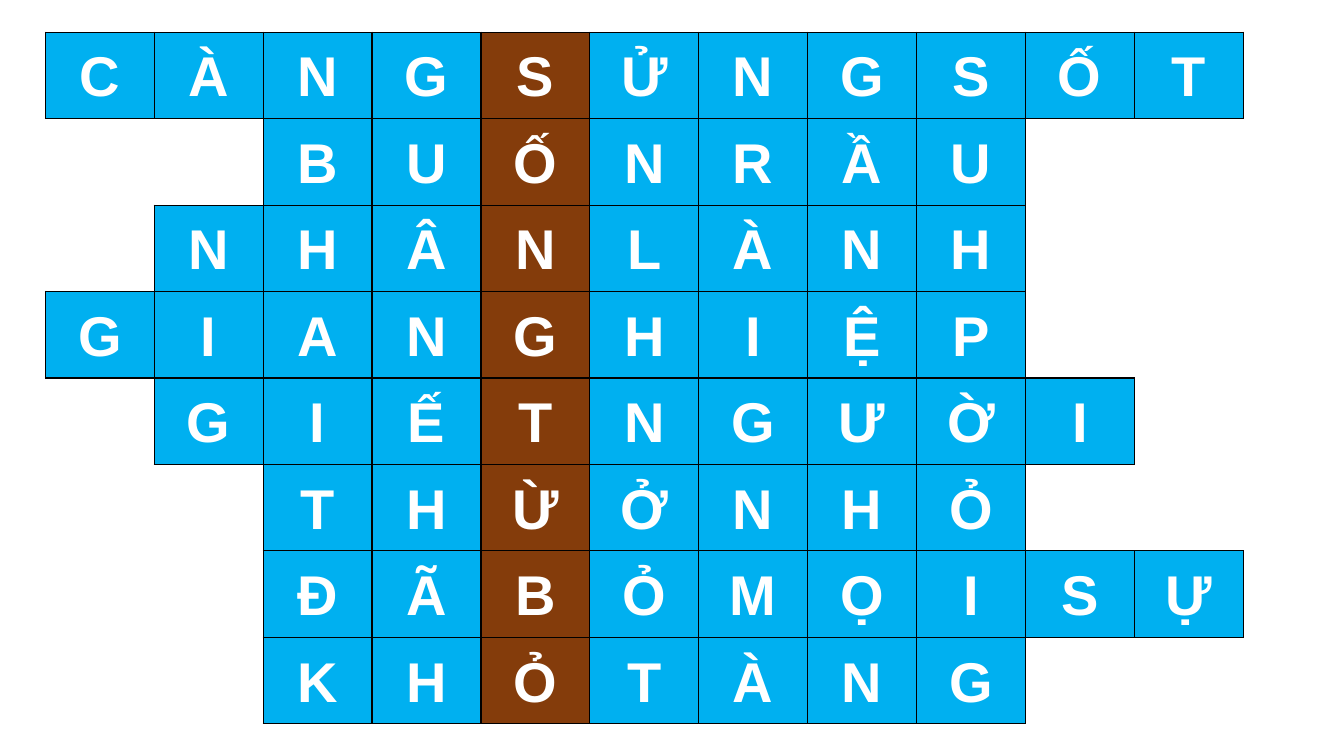
from lxml import etree
from pptx import Presentation
from pptx.dml.color import RGBColor
from pptx.enum.text import MSO_ANCHOR, PP_ALIGN
from pptx.oxml.ns import qn
from pptx.util import Inches, Pt

CENTER = PP_ALIGN.CENTER
MIDDLE = MSO_ANCHOR.MIDDLE

COLORS = {"letter": "FFFFFF", "square": "00B0F0", "keyword": "843C0B", "border": "000000"}
FONT = "Arial"
COLUMNS = 11
KEYWORD_COLUMN = 4
ANSWERS = [
    (0, "CÀNGSỬNGSỐT"),
    (2, "BUỐNRẦU"),
    (1, "NHÂNLÀNH"),
    (0, "GIANGHIỆP"),
    (1, "GIẾTNGƯỜI"),
    (2, "THỪỞNHỎ"),
    (2, "ĐÃBỎMỌISỰ"),
    (2, "KHỎTÀNG"),
]
SIDES = {"a:lnL": (0, -1), "a:lnR": (0, 1), "a:lnT": (-1, 0), "a:lnB": (1, 0)}


def add_border(square, side, visible):
    line = etree.SubElement(square._tc.get_or_add_tcPr(), qn(side), w=str(Pt(1)))
    if visible:
        fill = etree.SubElement(line, qn("a:solidFill"))
        etree.SubElement(fill, qn("a:srgbClr"), val=COLORS["border"])
    else:
        etree.SubElement(line, qn("a:noFill"))


def write_letter(square, letter, color):
    square.fill.solid()
    square.fill.fore_color.rgb = RGBColor.from_string(color)
    square.vertical_anchor = MIDDLE
    square.margin_left = square.margin_right = Inches(0.07)
    square.margin_top = square.margin_bottom = 0
    paragraph = square.text_frame.paragraphs[0]
    paragraph.alignment = CENTER
    paragraph.line_spacing = 1.07
    paragraph.space_after = Pt(8)
    run = paragraph.add_run()
    run.text = letter
    run.font.name = FONT
    run.font.size = Pt(40)
    run.font.bold = True
    run.font.color.rgb = RGBColor.from_string(COLORS["letter"])


def add_crossword(slide, left, top, width, height):
    crossword = slide.shapes.add_table(
        len(ANSWERS), COLUMNS, Inches(left), Inches(top), Inches(width), Inches(height)
    ).table
    crossword.first_row = False
    crossword.horz_banding = False
    letters = {
        (row, start + offset): letter
        for row, (start, answer) in enumerate(ANSWERS)
        for offset, letter in enumerate(answer)
    }
    for row in range(len(ANSWERS)):
        for column in range(COLUMNS):
            square = crossword.cell(row, column)
            filled = (row, column) in letters
            for side, (down, across) in SIDES.items():
                add_border(square, side, filled or (row + down, column + across) in letters)
            if filled:
                color = COLORS["keyword" if column == KEYWORD_COLUMN else "square"]
                write_letter(square, letters[row, column], color)
            else:
                square.fill.background()


def main():
    presentation = Presentation()
    presentation.slide_width = Inches(13.33)
    presentation.slide_height = Inches(7.5)
    slide = presentation.slides.add_slide(presentation.slide_layouts[6])
    add_crossword(slide, 0.45, 0.32, 11.88, 6.86)
    presentation.save("out.pptx")


if __name__ == "__main__":
    main()
